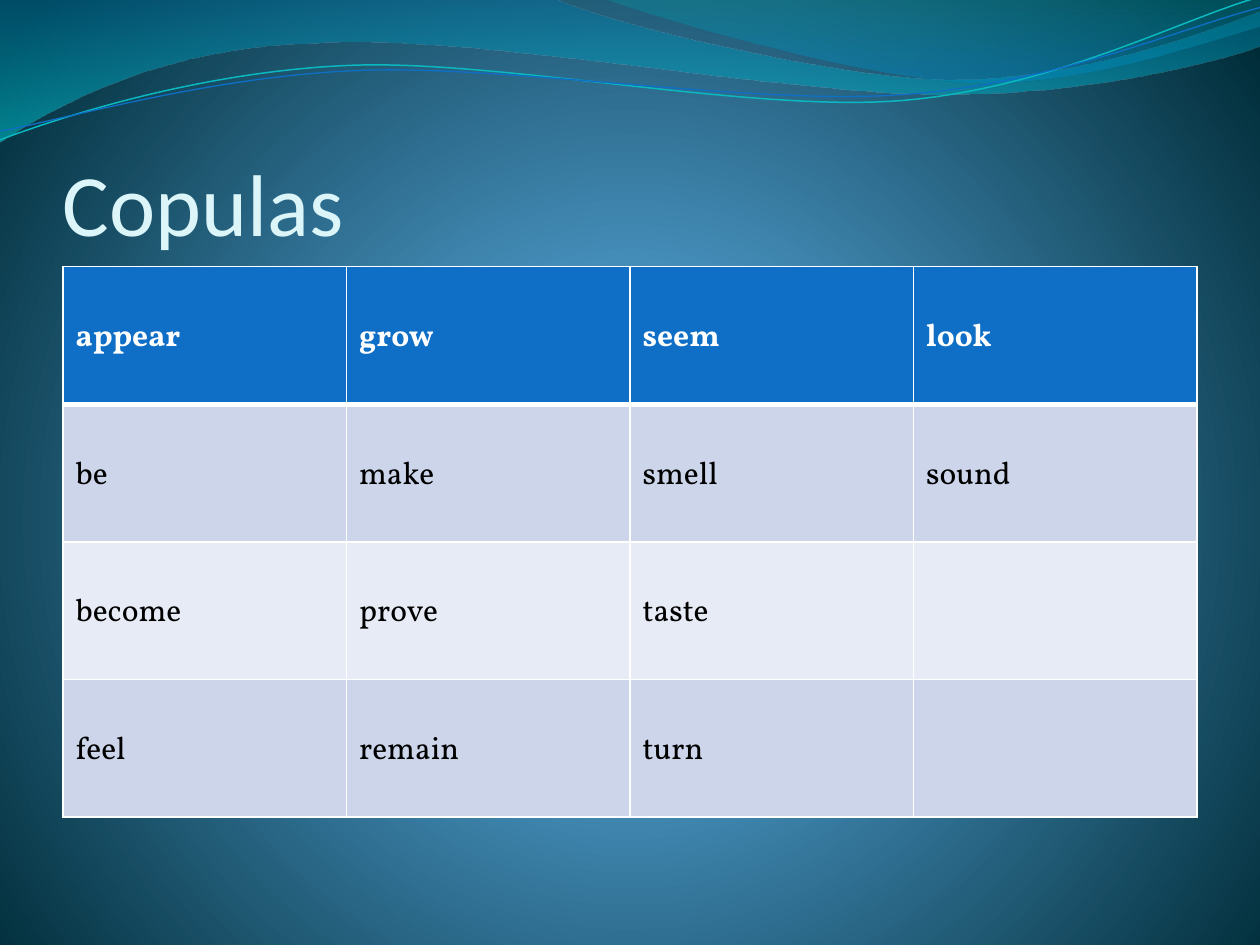
from lxml import etree
from pptx import Presentation
from pptx.dml.color import RGBColor
from pptx.enum import text
from pptx.oxml import ns
from pptx.util import Pt

COLORS = {
    "title": "DBF5F9", "white": "FFFFFF", "black": "000000",
    "header": "0F6FC6", "band_dark": "CCD5EA", "band_light": "E7EBF5",
    "teal_line": "0AB8BF", "blue_line": "0F6FC6",
}
RGB = {name: RGBColor.from_string(value) for name, value in COLORS.items()}


def paint_gradient(fill, parent, stops, direction):
    """Set a gradient of (percent, colour, opacity) stops; direction is its lin or path XML."""
    fill.solid()
    marks = "".join(
        f'<a:gs pos="{percent * 1000}"><a:srgbClr val="{color}">'
        f'<a:alpha val="{opacity * 1000}"/></a:srgbClr></a:gs>'
        for percent, color, opacity in stops)
    gradient = etree.fromstring(
        f'<a:gradFill {ns.nsdecls("a")} rotWithShape="1">'
        f"<a:gsLst>{marks}</a:gsLst>{direction}</a:gradFill>")
    parent.replace(parent.find(ns.qn("a:solidFill")), gradient)


def draw_wave(slide, start, steps, close):
    """Draw a freeform: a step of 2 numbers is a line, of 6 a cubic curve."""
    builder = slide.shapes.build_freeform(Pt(start[0]), Pt(start[1]))
    for step in steps:
        corners = [(Pt(x), Pt(y)) for x, y in zip(step[::2], step[1::2])]
        builder.add_line_segments(corners, close=False)
    if close:
        builder.add_line_segments([], close=True)
    wave = builder.convert_to_shape()
    wave.shadow.inherit = False
    # Join the three segments of each curve step into one Bezier segment
    segments = iter(wave.element.findall(".//" + ns.qn("a:lnTo")))
    for step in steps:
        group = [next(segments) for _ in step[::2]]
        if len(group) == 3:
            curve = etree.Element(ns.qn("a:cubicBezTo"))
            group[0].addprevious(curve)
            for segment in group:
                curve.append(segment[0])
                segment.getparent().remove(segment)
    return wave


deck = Presentation()
deck.slide_width, deck.slide_height = Pt(720), Pt(540)
page = deck.slides.add_slide(deck.slide_layouts[6])

# Background
background_fill = page.background.fill
background_fill.solid()
paint_gradient(
    background_fill, page.element.find(".//" + ns.qn("p:bgPr")),
    [(0, "4AA0D6", 100), (25, "4C98C7", 100), (100, "002C38", 100)],
    '<a:path path="circle">'
    '<a:fillToRect l="10000" t="110000" r="10000" b="100000"/></a:path>')

# Translucent waves
filled_waves = [
    ((0, 0),
     [(316.8, -0.7), (342.7, 12.2, 478.1, 45.4, 545.8, 45.4),
      (614.2, 45.4, 689.8, 18.7, 720, 6.5), (720.7, 25.9),
      (707.8, 31.7, 626.4, 54.7, 537.1, 54), (447.8, 54, 275, 20.2, 185, 24.5),
      (92.9, 25.9, 33.1, 59.8, -0.7, 81.4), (0, 0)],
     [(0, "0074A1", 45), (100, "00C6CF", 55)]),
    ((344.9, -0.7),
     [(366.5, 7.9, 491, 44.6, 553.7, 46.8), (616.3, 49.7, 691.9, 23, 720, 15.1),
      (720, 0), (344.9, -0.7)],
     [(0, "00A1A9", 30), (80, "008BBF", 45)]),
]
for start, steps, stops in filled_waves:
    wave = draw_wave(page, start, steps, close=True)
    paint_gradient(wave.fill, wave.element.spPr, stops, '<a:lin ang="5400000" scaled="0"/>')
    wave.line.fill.background()

# Thin wave lines
wave_lines = [
    ((0, 79.9),
     [(34.6, 67, 113.8, 41, 199.4, 37.4), (284.4, 33.8, 427, 64.1, 513.4, 57.6),
      (599.8, 51.1, 675.4, 10.8, 718.6, -1.4)], "teal_line", 0.85),
    ((0, 74.9),
     [(33.8, 69.1, 118.1, 43.9, 203.8, 40.3), (290.2, 36.7, 429.8, 60.5, 516.2, 54),
      (601.9, 48.2, 677.5, 15.1, 720, 4.3)], "blue_line", 0.75),
]
for start, steps, color, width in wave_lines:
    wave = draw_wave(page, start, steps, close=False)
    wave.fill.background()
    wave.line.color.rgb = RGB[color]
    wave.line.width = Pt(width)

# Title
title_box = page.shapes.add_textbox(Pt(36), Pt(55), Pt(648), Pt(90))
frame = title_box.text_frame
frame.word_wrap = True
frame.vertical_anchor = text.MSO_ANCHOR.BOTTOM
frame.margin_left = frame.margin_right = frame.margin_bottom = 0
frame.margin_top = Pt(3.6)
para = frame.paragraphs[0]
para.text = "Copulas"
para.font.name, para.font.size = "Calibri", Pt(50)
para.font.color.rgb = RGB["title"]

# Table of verbs
verbs = [
    ["appear", "grow", "seem", "look"],
    ["be", "make", "smell", "sound"],
    ["become", "prove", "taste", ""],
    ["feel", "remain", "turn", ""],
]
table = page.shapes.add_table(
    len(verbs), len(verbs[0]), Pt(36), Pt(152.4), Pt(648), Pt(314.6)).table
table.first_row = table.horz_banding = False
for row, words in enumerate(verbs):
    is_header = row == 0
    band = "header" if is_header else "band_dark" if row % 2 else "band_light"
    for column, word in enumerate(words):
        cell = table.cell(row, column)
        cell.fill.solid()
        cell.fill.fore_color.rgb = RGB[band]
        cell.margin_top = Pt(28.6)
        para = cell.text_frame.paragraphs[0]
        para.text = word
        para.font.name, para.font.size = "Vollkorn", Pt(18)
        para.font.bold = is_header
        para.font.color.rgb = RGB["white" if is_header else "black"]
        for index, side in enumerate("LRTB"):
            thick = (side == "B" and row == 0) or (side == "T" and row == 1)
            border = etree.fromstring(
                f'<a:ln{side} {ns.nsdecls("a")} w="{Pt(3 if thick else 1)}"><a:solidFill>'
                f'<a:srgbClr val="{COLORS["white"]}"/></a:solidFill></a:ln{side}>')
            cell._tc.tcPr.insert(index, border)

deck.save("out.pptx")
